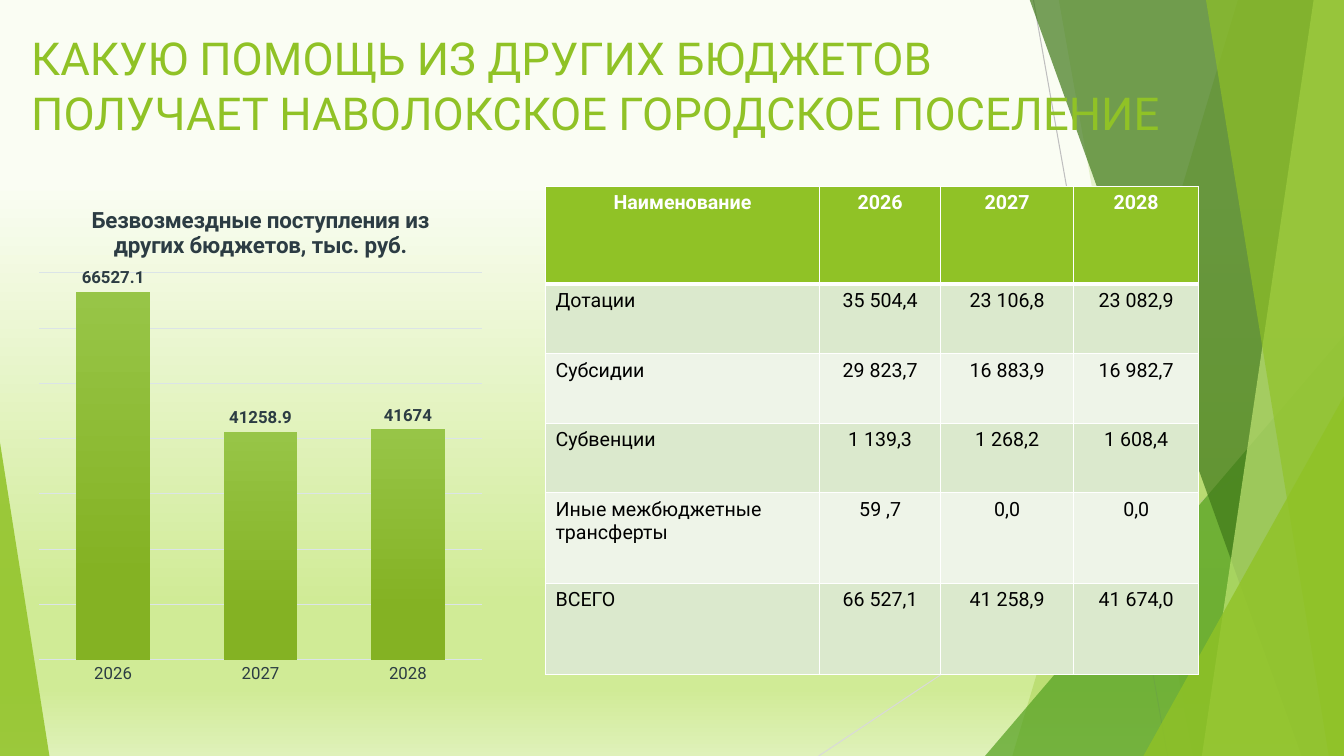
"""Build the slide on budget transfers received by the Navoloki settlement."""
from copy import deepcopy

from lxml.etree import SubElement
from pptx import Presentation
from pptx.chart.data import CategoryChartData
from pptx.dml.color import RGBColor
from pptx.enum.chart import XL_CHART_TYPE as ChartType, XL_LABEL_POSITION as LabelPosition
from pptx.enum.chart import XL_TICK_MARK as TickMark
from pptx.enum.shapes import MSO_CONNECTOR as Connector, MSO_SHAPE as Shape
from pptx.enum.text import MSO_ANCHOR as Anchor, MSO_AUTO_SIZE as AutoSize, PP_ALIGN as Align
from pptx.oxml.ns import qn
from pptx.util import Inches, Pt

WIDTH, HEIGHT = 13.33, 7.5
GREEN, SLATE, GRID = "90C226", "2C3C43", "DBE4E7"
YEARS = ["2026", "2027", "2028"]
rgb = RGBColor.from_string


def style(font, size, color, bold=False):
    font.name, font.size, font.bold = "Roboto", Pt(size), bold
    font.color.rgb = rgb(color)


def shade(fill, stops):
    fill.gradient_angle = 270
    for stop, (position, color) in zip(fill.gradient_stops, stops):
        stop.position = position
        stop.color.rgb = rgb(color)


deck = Presentation()
deck.slide_width, deck.slide_height = Inches(WIDTH), Inches(HEIGHT)
page = deck.slides.add_slide(deck.slide_layouts[5])

backdrop = page.background.fill
backdrop.gradient()
stop_list = page.element.find(".//" + qn("a:gsLst"))
for _ in range(2):
    stop_list.append(deepcopy(stop_list[0]))
shade(backdrop, [(0.24, "FAFDF3"), (0.8, "D0EB96"), (0.91, "D0EB96"), (1, "DFF1B9")])

for start_x, start_y, end_x, color in [(10.25, 0, 11.58, "BFBFBF"), (WIDTH, 4.03, 8.12, "D9D9D9")]:
    ray = page.shapes.add_connector(
        Connector.STRAIGHT, Inches(start_x), Inches(start_y), Inches(end_x), Inches(HEIGHT))
    ray.line.color.rgb = rgb(color)
    ray.line.width = Pt(0.75)
    SubElement(ray.element.spPr, qn("a:effectLst"))

# Sheets give top and bottom x; triangles give left, top, right and apex.
facets = [
    ((12.28, 10.04), GREEN, 30),
    ((10.5, 11.83), GREEN, 20),
    ((9.77, 3.33, WIDTH, 1), "54A021", 72),
    ((10.21, 12.91), "3F7819", 70),
    ((13.03, 11.92), "C0E474", 70),
    ((11.96, 13.18), GREEN, 65),
    ((11.34, 3.93, WIDTH, 1), GREEN, 80),
    ((0, 4.39, 0.49, 0), GREEN, 85),
]
for outline, color, opacity in facets:
    if len(outline) == 2:
        top_x, bottom_x = outline
        pen = page.shapes.build_freeform(Inches(top_x), Inches(-0.01))
        corners = [(WIDTH, -0.01), (WIDTH, HEIGHT), (bottom_x, HEIGHT)]
        pen.add_line_segments([(Inches(x), Inches(y)) for x, y in corners])
        facet = pen.convert_to_shape()
    else:
        left, top, right, apex = outline
        facet = page.shapes.add_shape(
            Shape.ISOSCELES_TRIANGLE, Inches(left), Inches(top),
            Inches(right - left), Inches(HEIGHT - top))
        facet.adjustments[0] = apex
    facet.shadow.inherit = False
    facet.line.fill.background()
    facet.fill.solid()
    facet.fill.fore_color.rgb = rgb(color)
    tint = facet.element.spPr.find(qn("a:solidFill"))[0]
    SubElement(tint, qn("a:alpha"), val=str(opacity * 1000))

title = page.shapes.title
title.element.getparent().append(title.element)
title.left, title.top = Inches(0.21), Inches(0.25)
title.width, title.height = Inches(11.59), Inches(0.94)
frame = title.text_frame
frame.text = "КАКУЮ ПОМОЩЬ ИЗ ДРУГИХ БЮДЖЕТОВ ПОЛУЧАЕТ НАВОЛОКСКОЕ ГОРОДСКОЕ ПОСЕЛЕНИЕ"
frame.word_wrap, frame.auto_size = True, AutoSize.NONE
frame.vertical_anchor = Anchor.TOP
frame.paragraphs[0].alignment = Align.LEFT
style(frame.paragraphs[0].runs[0].font, 32.4, GREEN)

data = CategoryChartData()
data.categories = YEARS
data.add_series("Series 1", [66527.1, 41258.9, 41674])
chart = page.shapes.add_chart(
    ChartType.COLUMN_CLUSTERED, Inches(0.3), Inches(1.85), Inches(4.57), Inches(5.05), data).chart
style(chart.font, 10, "000000")
chart.has_legend = False
chart.has_title = True
heading = chart.chart_title.text_frame
heading.text = "Безвозмездные поступления из других бюджетов, тыс. руб."
style(heading.paragraphs[0].runs[0].font, 16, SLATE, True)

plot_area = chart.element.find(".//" + qn("c:plotArea"))
for old_layout in plot_area.findall(qn("c:layout")):
    plot_area.remove(old_layout)
layout = SubElement(plot_area, qn("c:layout"))
plot_area.insert(0, layout)
manual = SubElement(layout, qn("c:manualLayout"))
for tag, value in [("layoutTarget", "inner"), ("xMode", "edge"), ("yMode", "edge"),
                   ("x", "0.02"), ("y", "0.17"), ("w", "0.96"), ("h", "0.76")]:
    SubElement(manual, qn("c:" + tag), val=value)

years_axis, money_axis = chart.category_axis, chart.value_axis
years_axis.major_tick_mark = TickMark.NONE
style(years_axis.tick_labels.font, 12, SLATE)
money_axis.visible = False
money_axis.has_major_gridlines = True
money_axis.minimum_scale, money_axis.maximum_scale, money_axis.major_unit = 0, 70000, 10000
for line in (years_axis.format.line, money_axis.major_gridlines.format.line):
    line.color.rgb = rgb(GRID)
    line.width = Pt(0.75)

plot = chart.plots[0]
plot.gap_width, plot.overlap, plot.vary_by_categories = 100, -24, False
columns = plot.series[0]
columns.format.fill.gradient()
shade(columns.format.fill, [(0, "97C547"), (0.78, "84B223")])
labels = columns.data_labels
labels.show_value = True
labels.position = LabelPosition.OUTSIDE_END
style(labels.font, 12, SLATE, True)

rows = [
    ["Наименование", *YEARS],
    ["Дотации", "35 504,4", "23 106,8", "23 082,9"],
    ["Субсидии", "29 823,7", "16 883,9", "16 982,7"],
    ["Субвенции", "1 139,3", "1 268,2", "1 608,4"],
    ["Иные межбюджетные трансферты", "59 ,7", "0,0", "0,0"],
    ["ВСЕГО", "66 527,1", "41 258,9", "41 674,0"],
]
table = page.shapes.add_table(
    len(rows), 4, Inches(5.41), Inches(1.85), Inches(6.49), Inches(4.84)).table
for column, width in zip(table.columns, [2.72, 1.2, 1.32, 1.24]):
    column.width = Inches(width)
for row, height in zip(table.rows, [0.97, 0.69, 0.69, 0.69, 0.9, 0.9]):
    row.height = Inches(height)
for r, texts in enumerate(rows):
    for c, text in enumerate(texts):
        cell = table.cell(r, c)
        cell.text = text
        para = cell.text_frame.paragraphs[0]
        para.alignment = Align.LEFT if r and c == 0 else Align.CENTER
        style(para.runs[0].font, 14, "000000" if r else "FFFFFF", r == 0)
        properties = cell._tc.get_or_add_tcPr()
        for side in "LRTB":
            thick = (r, side) in [(0, "B"), (1, "T")]
            border = SubElement(properties, qn("a:ln" + side), w=str(Pt(3 if thick else 1)))
            SubElement(SubElement(border, qn("a:solidFill")), qn("a:srgbClr"), val="FFFFFF")
        cell.fill.solid()
        cell.fill.fore_color.rgb = rgb(("DBE9CD" if r % 2 else "EEF4E8") if r else GREEN)

deck.save("out.pptx")
